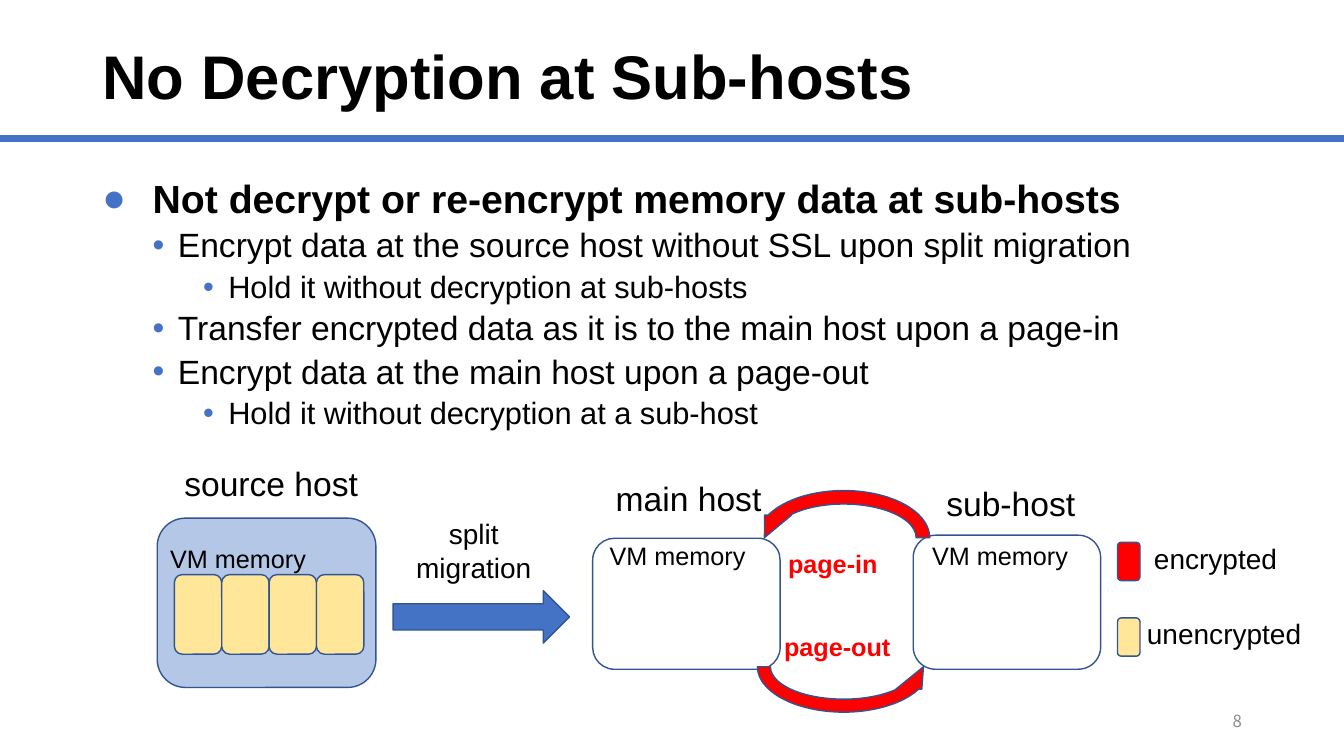
from pptx import Presentation
from pptx import util as u
from pptx.dml.color import RGBColor
from pptx.enum import shapes, text
from lxml import etree
from pptx.oxml.ns import qn

# Grid: 40 columns by 30 rows
WIDE, HIGH = u.Inches(13.333), u.Inches(7.5)
COL, ROW = WIDE / 40, HIGH / 30

BLACK = RGBColor(0x00, 0x00, 0x00)
WHITE = RGBColor(0xFF, 0xFF, 0xFF)
GREY = RGBColor(0x8C, 0x8C, 0x8C)
BLUE = RGBColor(0x44, 0x72, 0xC4)
PALE = RGBColor(0xB4, 0xC7, 0xE7)
EDGE = RGBColor(0x32, 0x54, 0x91)
RED = RGBColor(0xFF, 0x00, 0x00)
SAND = RGBColor(0xFF, 0xE6, 0x99)

KIND = shapes.MSO_SHAPE
LEFT, MID, RIGHT = text.PP_ALIGN.LEFT, text.PP_ALIGN.CENTER, text.PP_ALIGN.RIGHT

# Per level: indent, hang (inches), size, space before, line spacing, bullet
LEVELS = [
    (0.5, 0.5, 28, 10, 1.0, "●"),
    (0.75, 0.25, 24, 5, 0.9, "•"),
    (1.25, 0.25, 22, 5, 0.9, "•"),
]
POINTS = [
    (0, "Not decrypt or re-encrypt memory data at sub-hosts"),
    (1, "Encrypt data at the source host without SSL upon split migration"),
    (2, "Hold it without decryption at sub-hosts"),
    (1, "Transfer encrypted data as it is to the main host upon a page-in"),
    (1, "Encrypt data at the main host upon a page-out"),
    (2, "Hold it without decryption at a sub-host"),
]


def cells(x, y, w, h):
    return [round(n) for n in (x * COL, y * ROW, w * COL, h * ROW)]


def style(para, size, color=BLACK, bold=False, face="Arial"):
    font = para.font
    font.name, font.size, font.bold = face, u.Pt(size), bold
    font.color.rgb = color


def frame(slide, box, wrap=False, anchor=text.MSO_ANCHOR.TOP):
    body = slide.shapes.add_textbox(*cells(*box)).text_frame
    body.word_wrap = wrap
    body.vertical_anchor = anchor
    return body


def label(slide, box, words, size, color=BLACK, bold=False, align=LEFT):
    body = frame(slide, box)
    body.text = words
    for para in body.paragraphs:
        para.alignment = align
        style(para, size, color, bold)


def block(slide, box, fill, kind=KIND.ROUNDED_RECTANGLE, flip=None):
    shape = slide.shapes.add_shape(kind, *cells(*box))
    shape.shadow.inherit = False
    shape.fill.solid()
    shape.fill.fore_color.rgb = fill
    shape.line.color.rgb = EDGE
    shape.line.width = u.Pt(1)
    if flip:
        shape._element.spPr.find(qn("a:xfrm")).set(flip, "1")


def bullet(para, indent, hang, mark):
    props = para._p.get_or_add_pPr()
    props.set("marL", str(u.Inches(indent)))
    props.set("indent", str(-u.Inches(hang)))
    tint = etree.SubElement(props, qn("a:buClr"))
    etree.SubElement(tint, qn("a:srgbClr")).set("val", str(BLUE))
    etree.SubElement(props, qn("a:buFont")).set("typeface", "Arial")
    etree.SubElement(props, qn("a:buChar")).set("char", mark)


def header(slide):
    rule = slide.shapes.add_connector(
        shapes.MSO_CONNECTOR.STRAIGHT, 0, round(5.48 * ROW), WIDE, round(5.48 * ROW))
    rule.line.color.rgb = BLUE
    rule.line.width = u.Pt(5)
    etree.SubElement(rule._element.spPr, qn("a:effectLst"))
    body = frame(slide, (2.75, 0.28, 34.5, 5.76), True, text.MSO_ANCHOR.MIDDLE)
    body.text = "No Decryption at Sub-hosts"
    body.paragraphs[0].line_spacing = 0.9
    style(body.paragraphs[0], 44, bold=True)


def outline(slide):
    body = frame(slide, (2.75, 6.72, 34.5, 20.28), True)
    body.text = "\n".join(words for _, words in POINTS)
    for para, (level, _) in zip(body.paragraphs, POINTS):
        indent, hang, size, before, lines, mark = LEVELS[level]
        para.level = level
        para.space_before = u.Pt(before)
        para.line_spacing = lines
        bullet(para, indent, hang, mark)
        style(para, size, bold=level == 0)


def hosts(slide):
    block(slide, (4.68, 20.56, 6.51, 6.72), PALE)
    block(slide, (27.18, 21.24, 5.58, 5.32), WHITE)
    block(slide, (17.64, 21.36, 5.58, 5.2), WHITE)
    for x, y, w, name in ((5.19, 18.16, 5.82, "source host"),
                          (18.03, 18.76, 4.98, "main host"),
                          (27.87, 18.96, 4.5, "sub-host")):
        label(slide, (x, y, w, 2), name, 24)
    for x, y in ((4.77, 21.36), (17.85, 21.24), (27.45, 21.24)):
        label(slide, (x, y, 4.8, 1.6), "VM memory", 18)
    # Memory pages of the source host
    for page in range(4):
        block(slide, (5.19 + 1.41 * page, 22.8, 1.41, 3.16), SAND)


def moves(slide):
    block(slide, (11.7, 23.44, 5.25, 2.08), BLUE, KIND.RIGHT_ARROW)
    label(slide, (12.06, 20.32, 4.08, 3.08), "split\nmigration", 20, align=MID)
    block(slide, (22.35, 24.4, 5.52, 4.12), RED, KIND.CIRCULAR_ARROW, "flipV")
    block(slide, (22.35, 19.2, 5.52, 4.28), RED, KIND.CIRCULAR_ARROW, "flipH")
    label(slide, (23.04, 24.84, 3.93, 1.6), "page-out", 18, RED, True)
    label(slide, (23.16, 21.56, 3.42, 1.6), "page-in", 18, RED, True)


def legend(slide):
    for row, (x, w, name, fill) in enumerate(((34.05, 4.29, "encrypted", RED),
                                              (33.84, 5.22, "unencrypted", SAND))):
        block(slide, (33.26, 21.52 + 3 * row, 0.67, 1.52), fill)
        label(slide, (x, 21.28 + 3 * row, w, 1.76), name, 20)


def number(slide):
    body = frame(slide, (28.26, 27.8, 9, 1.6), True, text.MSO_ANCHOR.MIDDLE)
    body.text = "8"
    body.paragraphs[0].alignment = RIGHT
    style(body.paragraphs[0], 12, GREY, face="Noto Sans CJK JP")


def main():
    deck = Presentation()
    deck.slide_width, deck.slide_height = WIDE, HIGH
    slide = deck.slides.add_slide(deck.slide_layouts[6])
    for part in (header, outline, hosts, moves, legend, number):
        part(slide)
    deck.save("out.pptx")


if __name__ == "__main__":
    main()
